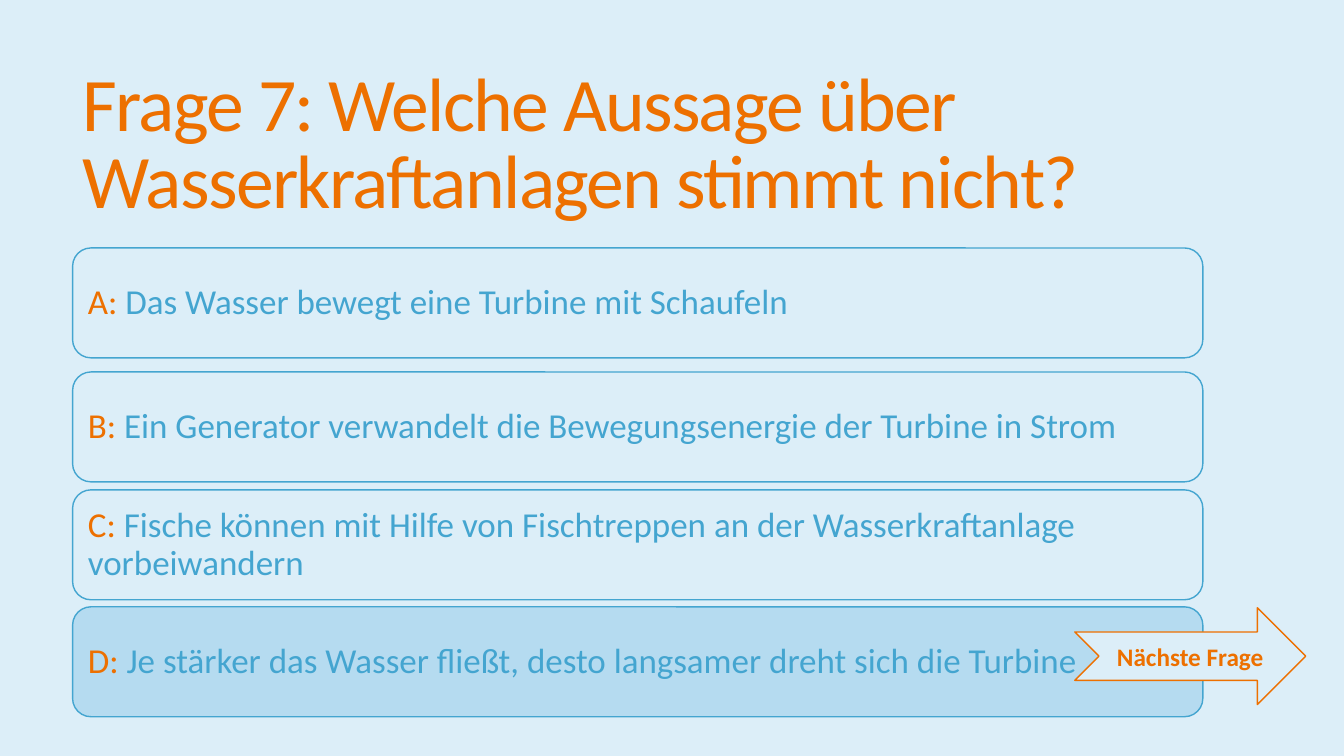
from pptx import Presentation
from pptx.dml.color import RGBColor
from pptx.enum import shapes, text
from pptx.util import Inches, Pt

FONT = "Calibri"
ORANGE = "ED7000"
BLUE = "44A5D0"
PALE = "DCEEF8"
HIGHLIGHT = "B5DBF0"

ANSWERS = [
    ("A: ", "Das Wasser bewegt eine Turbine mit Schaufeln", 2.46, PALE),
    ("B: ", "Ein Generator verwandelt die Bewegungsenergie der Turbine in Strom", 3.69, PALE),
    ("C: ", "Fische können mit Hilfe von Fischtreppen an der Wasserkraftanlage vorbeiwandern", 4.86, PALE),
    ("D: ", "Je stärker das Wasser fließt, desto langsamer dreht sich die Turbine", 6.02, HIGHLIGHT),
]


def color(value):
    return RGBColor.from_string(value)


def set_font(font, size, value, bold=False):
    font.name = FONT
    font.size = Pt(size)
    font.bold = bold
    font.color.rgb = color(value)


def set_title(slide, wording):
    title = slide.shapes.title
    title.left, title.top = Inches(0.72), Inches(0.55)
    title.width, title.height = Inches(12.45), Inches(1.81)
    frame = title.text_frame
    frame.auto_size = text.MSO_AUTO_SIZE.NONE
    frame.vertical_anchor = text.MSO_ANCHOR.MIDDLE
    frame.text = wording
    paragraph = frame.paragraphs[0]
    paragraph.alignment = text.PP_ALIGN.LEFT
    paragraph.line_spacing = 0.85
    set_font(paragraph.font, 54, ORANGE)
    paragraph.runs[0]._r.get_or_add_rPr().set("spc", "-120")


def add_outlined_shape(slide, kind, left, top, width, height, fill, line):
    shape = slide.shapes.add_shape(
        kind, Inches(left), Inches(top), Inches(width), Inches(height)
    )
    shape.shadow.inherit = False
    shape.fill.solid()
    shape.fill.fore_color.rgb = color(fill)
    shape.line.color.rgb = color(line)
    shape.line.width = Pt(1)
    shape.text_frame.word_wrap = True
    shape.text_frame.vertical_anchor = text.MSO_ANCHOR.MIDDLE
    return shape


def add_answer(slide, letter, wording, top, fill):
    shape = add_outlined_shape(
        slide, shapes.MSO_SHAPE.ROUNDED_RECTANGLE, 0.72, top, 11.21, 1.09, fill, BLUE
    )
    frame = shape.text_frame
    frame.margin_top = frame.margin_bottom = Inches(0.1)
    paragraph = frame.paragraphs[0]
    paragraph.alignment = text.PP_ALIGN.LEFT
    paragraph.line_spacing = 0.9
    for part, value in ((letter, ORANGE), (wording, BLUE)):
        run = paragraph.add_run()
        run.text = part
        set_font(run.font, 25, value)


def add_next_arrow(slide, wording):
    shape = add_outlined_shape(
        slide, shapes.MSO_SHAPE.NOTCHED_RIGHT_ARROW, 10.66, 6.03, 2.29, 0.96, PALE, ORANGE
    )
    shape.text_frame.text = wording
    paragraph = shape.text_frame.paragraphs[0]
    paragraph.alignment = text.PP_ALIGN.CENTER
    set_font(paragraph.font, 18, ORANGE, bold=True)


def main():
    presentation = Presentation()
    presentation.slide_width = Inches(13.33)
    presentation.slide_height = Inches(7.5)
    slide = presentation.slides.add_slide(presentation.slide_layouts[5])
    slide.background.fill.solid()
    slide.background.fill.fore_color.rgb = color(PALE)

    set_title(slide, "Frage 7: Welche Aussage über Wasserkraftanlagen stimmt nicht?")
    for letter, wording, top, fill in ANSWERS:
        add_answer(slide, letter, wording, top, fill)
    add_next_arrow(slide, "Nächste Frage")
    presentation.save("out.pptx")


if __name__ == "__main__":
    main()
